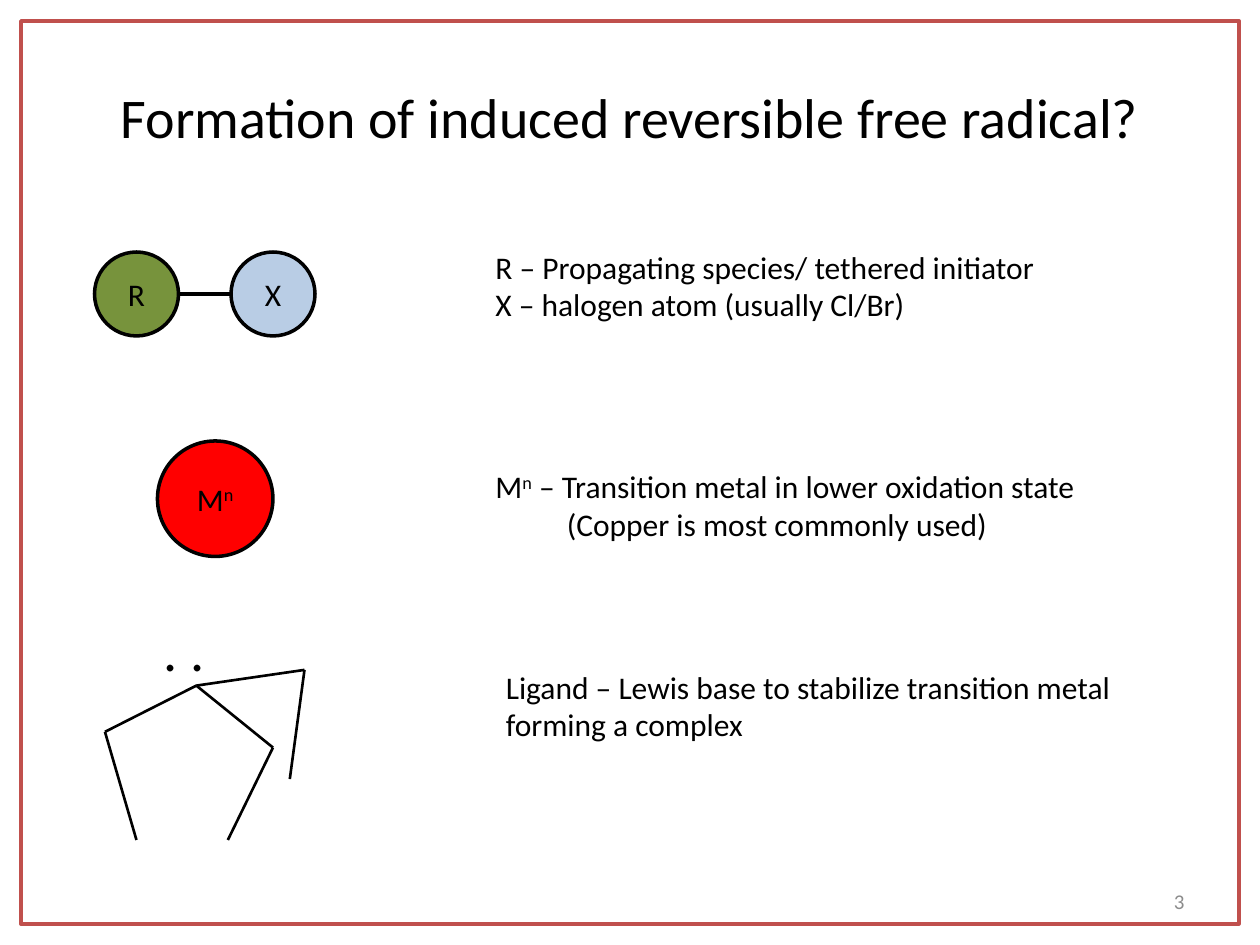
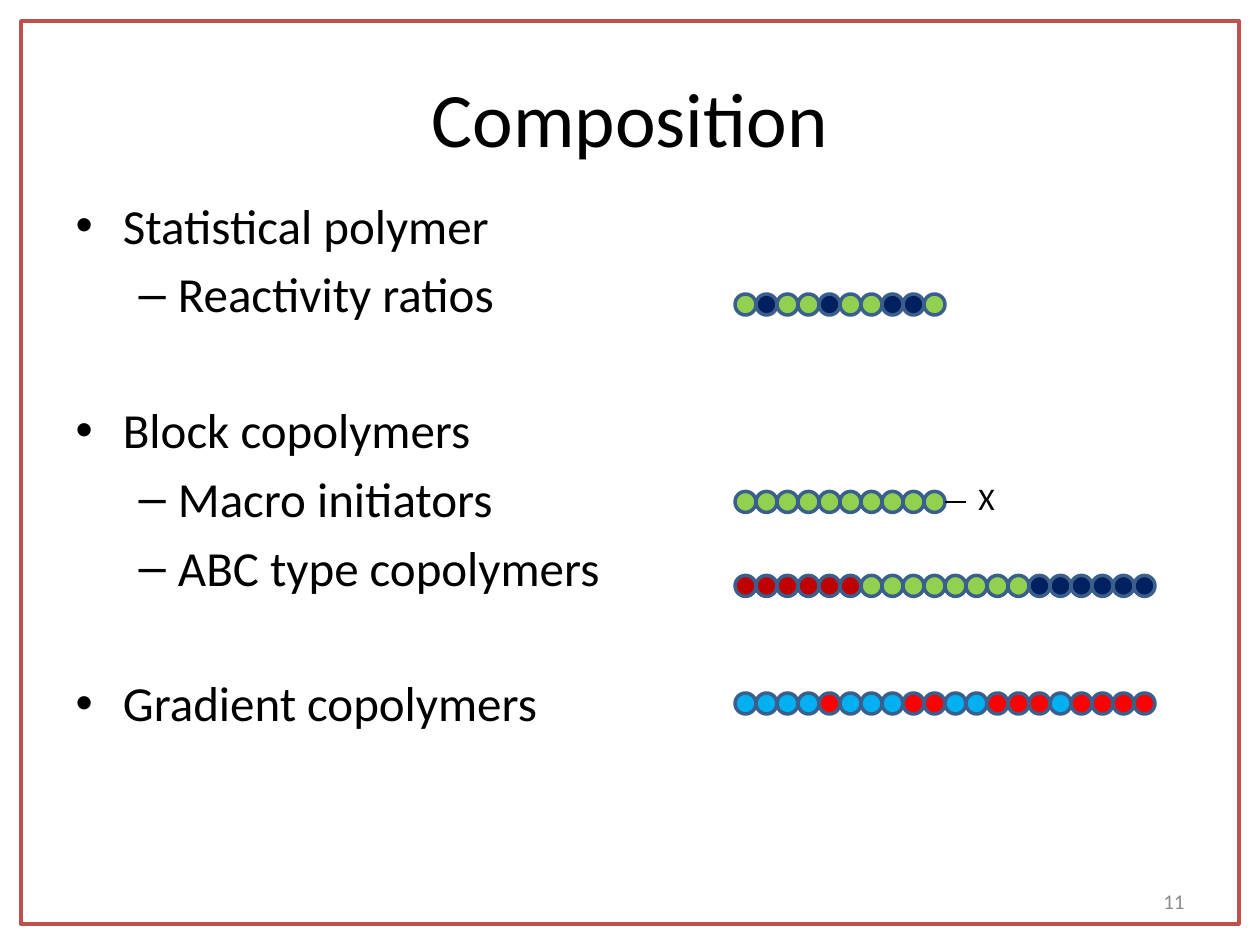
from dataclasses import dataclass

from lxml.etree import SubElement
from pptx import Presentation
from pptx.dml.color import RGBColor
from pptx.enum.shapes import MSO_CONNECTOR, MSO_SHAPE
from pptx.enum.text import MSO_ANCHOR, MSO_AUTO_SIZE, PP_ALIGN
from pptx.oxml.ns import qn
from pptx.util import Inches, Pt

COLUMNS, ROWS = 60, 45
WIDTH, HEIGHT = Inches(10), Inches(7.5)


@dataclass(frozen=True)
class Theme:
    font: str = "Calibri"
    ink: str = "000000"
    paper: str = "FFFFFF"
    frame: str = "C0504D"
    muted: str = "8C8C8C"
    radical: str = "77933C"
    halogen: str = "B9CDE5"
    metal: str = "FF0000"
    bead_edge: str = "3A5F8C"
    green: str = "92D050"
    navy: str = "002060"
    crimson: str = "C00000"
    sky: str = "00B0F0"
    red: str = "FF0000"
    title_size: int = 44
    long_title_size: int = 32
    list_size: int = 28
    text_size: int = 18
    number_size: int = 12
    section_gap: int = 44


THEME = Theme()
BEADS = {"G": THEME.green, "N": THEME.navy, "C": THEME.crimson,
         "S": THEME.sky, "R": THEME.red}
LIST = [
    ("Statistical polymer", 0),
    ("Reactivity ratios", 1),
    ("Block copolymers", 0),
    ("Macro initiators", 1),
    ("ABC type copolymers", 1),
    ("Gradient copolymers", 0),
]
CHAINS = [
    (14, "GNGGNGGNNG"),
    (23.4, "G" * 10),
    (27.4, "C" * 6 + "G" * 8 + "N" * 6),
    (33, "SSSSRSSSRRSSRRRSRRRR"),
]
METAL = ["M", ("n", "superscript")]


def across(columns):
    return round(WIDTH * columns / COLUMNS)


def down(rows):
    return round(HEIGHT * rows / ROWS)


def area(left, top, width, height):
    return across(left), down(top), across(width), down(height)


def color(value):
    return RGBColor.from_string(value)


def add_span(para, piece, size, ink=THEME.ink):
    text, style = piece if isinstance(piece, tuple) else (piece, None)
    span = para.add_run()
    span.text = text
    span.font.name = THEME.font
    span.font.size = Pt(size)
    span.font.color.rgb = color(ink)
    if style == "superscript":
        span.font._element.set("baseline", "30000")


def write(frame, lines, size, ink=THEME.ink, align=PP_ALIGN.LEFT):
    for index, pieces in enumerate(lines):
        para = frame.add_paragraph() if index else frame.paragraphs[0]
        para.alignment = align
        for piece in pieces:
            add_span(para, piece, size, ink)


def add_text(shapes, place, lines, size=THEME.text_size, wrap=True, **style):
    box = shapes.add_textbox(*area(*place))
    box.text_frame.word_wrap = wrap
    write(box.text_frame, lines, size, **style)
    return box


def add_outlined(shapes, kind, place, fill, line):
    shape = shapes.add_shape(kind, *area(*place))
    shape.shadow.inherit = False
    shape.fill.solid()
    shape.fill.fore_color.rgb = color(fill)
    shape.line.color.rgb = color(line)
    shape.line.width = Pt(2)
    return shape


def add_atom(shapes, left, top, diameter, fill, label):
    atom = add_outlined(shapes, MSO_SHAPE.OVAL,
                        (left, top, diameter, diameter), fill, THEME.ink)
    atom.text_frame.vertical_anchor = MSO_ANCHOR.MIDDLE
    write(atom.text_frame, [label], THEME.text_size, align=PP_ALIGN.CENTER)


def add_bond(shapes, start, end, weight):
    bond = shapes.add_connector(
        MSO_CONNECTOR.STRAIGHT,
        across(start[0]), down(start[1]), across(end[0]), down(end[1]))
    bond.line.color.rgb = color(THEME.ink)
    bond.line.width = Pt(weight)
    SubElement(bond._element.spPr, qn("a:effectLst"))


def add_chain(shapes, top, sequence):
    for index, bead in enumerate(sequence):
        add_outlined(shapes, MSO_SHAPE.OVAL, (35 + index, top, 1, 1),
                     BEADS[bead], THEME.bead_edge)


def add_ligand(page):
    ligand = page.shapes.add_group_shape().shapes
    left, top, right, tip = (5, 34.85), (9.35, 32.65), (13, 35.6), (14.5, 31.9)
    for start, end in [((6.5, 40), left), (top, left), (right, top),
                       (tip, top), ((10.85, 40), right), ((13.8, 37.1), tip)]:
        add_bond(ligand, start, end, 1.5)
    add_text(ligand, (7.2, 29, 5.1, 3.8), [[". ."]], THEME.long_title_size)


def place_placeholder(shape, place):
    shape.left, shape.top, shape.width, shape.height = area(*place)
    shape.text_frame.auto_size = MSO_AUTO_SIZE.NONE


def add_page(deck, layout, title, title_size, number):
    page = deck.slides.add_slide(deck.slide_layouts.get_by_name(layout))
    heading = page.shapes.title
    frame = add_outlined(page.shapes, MSO_SHAPE.RECTANGLE, (1, 1, 58, 43),
                         THEME.paper, THEME.frame)
    heading._element.addprevious(frame._element)
    place_placeholder(heading, (3, 1.8, 54, 7.5))
    heading.text_frame.vertical_anchor = MSO_ANCHOR.MIDDLE
    write(heading.text_frame, [[title]], title_size, align=PP_ALIGN.CENTER)
    box = add_text(page.shapes, (43, 41.7, 14, 2.4), [[number]],
                   THEME.number_size, ink=THEME.muted, align=PP_ALIGN.RIGHT)
    box.text_frame.vertical_anchor = MSO_ANCHOR.MIDDLE
    return page


def add_radical_page(deck):
    page = add_page(deck, "Title Only",
                    "Formation of induced reversible free radical?",
                    THEME.long_title_size, "3")
    shapes = page.shapes
    add_bond(shapes, (8.5, 14), (11, 14), 2.25)
    add_atom(shapes, 4.5, 12, 4, THEME.radical, ["R"])
    add_atom(shapes, 11, 12, 4, THEME.halogen, ["X"])
    add_atom(shapes, 7.5, 21, 5.5, THEME.metal, METAL)
    add_ligand(page)
    add_text(shapes, (23, 11.5, 30.5, 6), [
        ["R – Propagating species/ tethered initiator"],
        ["X – halogen atom (usually Cl/Br)"]])
    metal_note = add_text(shapes, (23, 21.95, 30.5, 6), [
        METAL + [" – Transition metal in lower oxidation state"],
        ["(Copper is most commonly used)"]])
    remark = metal_note.text_frame.paragraphs[1]
    remark._p.get_or_add_pPr().set("marL", str(across(3.4)))
    add_text(shapes, (23.5, 31.5, 30.5, 6), [
        ["Ligand – Lewis base to stabilize transition metal forming a complex"]])


def add_composition_page(deck):
    page = add_page(deck, "Title and Content", "Composition",
                    THEME.title_size, "11")
    body = page.placeholders[1]
    place_placeholder(body, (3, 9, 32.5, 29.7))
    write(body.text_frame, [[text] for text, level in LIST], THEME.list_size)
    for index, (para, (text, level)) in enumerate(
            zip(body.text_frame.paragraphs, LIST)):
        para.level = level
        if index and level == 0:
            para.space_before = Pt(THEME.section_gap)
    for top, sequence in CHAINS:
        add_chain(page.shapes, top, sequence)
    add_bond(page.shapes, (45, 23.9), (46, 23.9), 0.75)
    add_text(page.shapes, (46, 22.5, 2, 2.4), [["X"]], wrap=False)


def main():
    deck = Presentation()
    deck.slide_width, deck.slide_height = WIDTH, HEIGHT
    add_radical_page(deck)
    add_composition_page(deck)
    deck.save("out.pptx")


if __name__ == "__main__":
    main()
